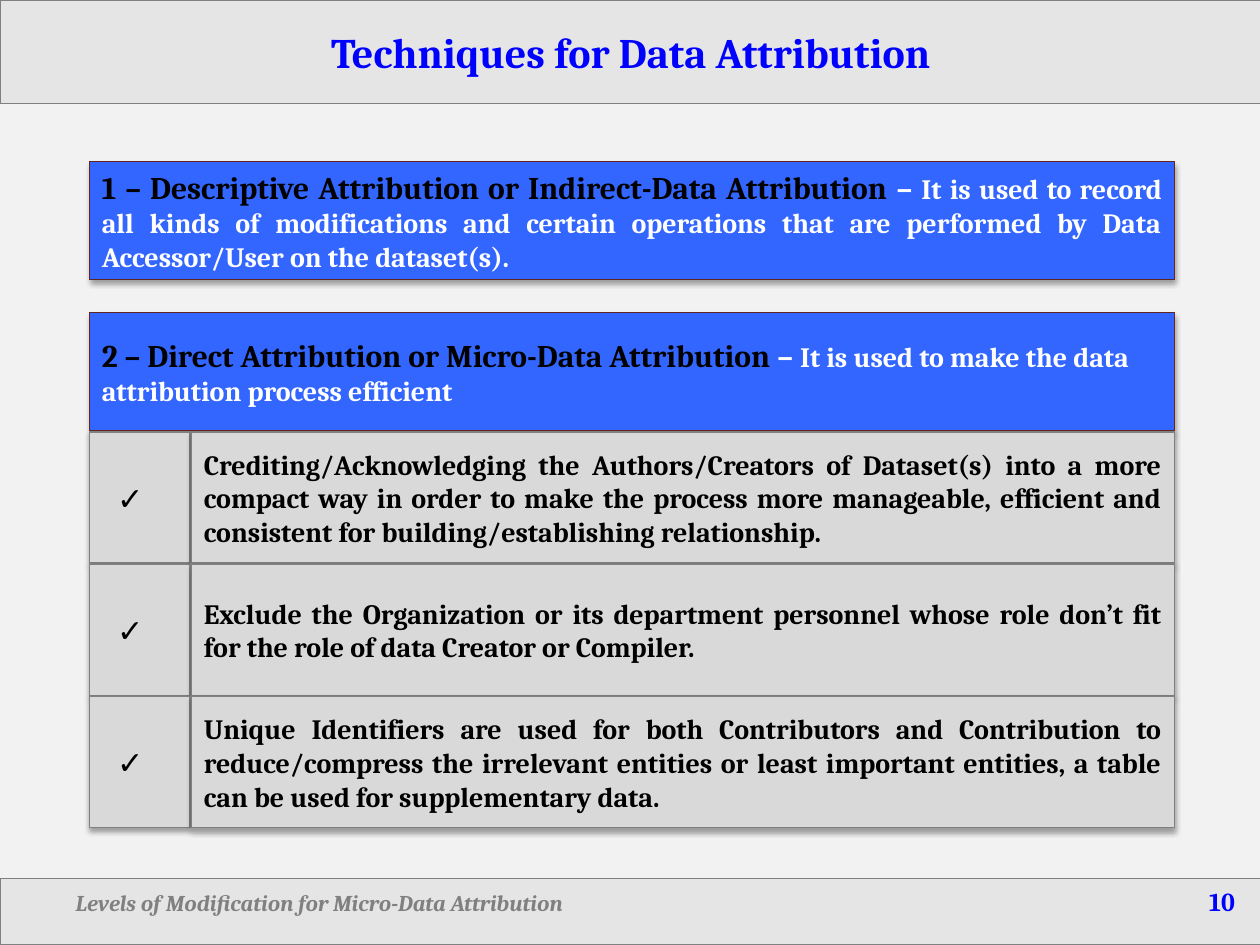
from lxml import etree
from pptx import Presentation
from pptx.dml.color import RGBColor
from pptx.enum.shapes import MSO_SHAPE
from pptx.enum.text import MSO_ANCHOR, MSO_AUTO_SIZE, PP_ALIGN
from pptx.oxml import parse_xml
from pptx.oxml.ns import qn
from pptx.util import Inches, Pt

RECTANGLE = MSO_SHAPE.RECTANGLE
MIDDLE, TOP = MSO_ANCHOR.MIDDLE, MSO_ANCHOR.TOP
LEFT, CENTER, JUSTIFY = PP_ALIGN.LEFT, PP_ALIGN.CENTER, PP_ALIGN.JUSTIFY
COLORS = {
    "background": "F2F2F2", "gray": "D9D9D9", "border": "808080",
    "blue": "3366FF", "brown": "632523", "bright": "0000FF",
    "black": "000000", "white": "FFFFFF",
}
SHADOW = (
    '<a:outerShdw xmlns:a="http://schemas.openxmlformats.org/drawingml/2006/main" '
    'blurRad="40000" dist="23000" dir="5400000" rotWithShape="0">'
    '<a:srgbClr val="000000"><a:alpha val="35000"/></a:srgbClr></a:outerShdw>'
)


def add_span(para, text, size=16, color="black", bold=True, italic=False, font="Cambria"):
    span = para.add_run()
    span.text = text
    span.font.name = font
    span.font.size = Pt(size)
    span.font.bold = bold
    span.font.italic = italic
    span.font.color.rgb = RGBColor.from_string(COLORS[color])


def style_box(box, fill, line, align, anchor=MIDDLE, translucent=False):
    box.shadow.inherit = False
    box.fill.solid()
    box.fill.fore_color.rgb = RGBColor.from_string(COLORS[fill])
    box.line.color.rgb = RGBColor.from_string(COLORS[line])
    box.line.width = Pt(0.75)
    properties = box.element.spPr
    if translucent:
        color = properties.find(qn("a:solidFill"))[0]
        etree.SubElement(color, qn("a:alpha"), val="50000")
    else:
        properties.find(qn("a:effectLst")).append(parse_xml(SHADOW))
    frame = box.text_frame
    frame.word_wrap = True
    frame.auto_size = MSO_AUTO_SIZE.NONE
    frame.vertical_anchor = anchor
    para = frame.paragraphs[0]
    para.alignment = align
    return para


deck = Presentation()
deck.slide_width, deck.slide_height = Inches(10), Inches(7.5)
page = deck.slides.add_slide(deck.slide_layouts[5])
page.background.fill.solid()
page.background.fill.fore_color.rgb = RGBColor.from_string(COLORS["background"])

title = page.shapes.title
title.left, title.top = Inches(0), Inches(0)
title.width, title.height = Inches(10.01), Inches(0.82)
para = style_box(title, "gray", "border", CENTER, translucent=True)
add_span(para, "Techniques for Data Attribution", size=24, color="bright")

footer = page.shapes.add_shape(RECTANGLE, Inches(0), Inches(6.97), Inches(10.01), Inches(0.53))
para = style_box(footer, "gray", "border", LEFT, anchor=TOP, translucent=True)
footer.text_frame.margin_left = Inches(0.6)
footer.text_frame.margin_top = Inches(0.06)
tabs = etree.SubElement(para._p.get_or_add_pPr(), qn("a:tabLst"))
etree.SubElement(tabs, qn("a:tab"), pos=str(Inches(9.2)), algn="r")
add_span(para, "Levels of Modification for Micro-Data Attribution\t", size=12.9,
         color="border", italic=True)
add_span(para, "10", size=14.8, color="bright")

techniques = [
    (1.28, JUSTIFY, "1 – Descriptive Attribution or Indirect-Data Attribution ",
     "It is used to record all kinds of modifications and certain operations "
     "that are performed by Data Accessor/User on the dataset(s)."),
    (2.48, LEFT, "2 – Direct Attribution or Micro-Data Attribution ",
     "It is used to make the data attribution process efficient"),
]
for top, align, heading, description in techniques:
    box = page.shapes.add_shape(RECTANGLE, Inches(0.71), Inches(top), Inches(8.61), Inches(0.94))
    para = style_box(box, "blue", "brown", align)
    add_span(para, heading, size=18)
    add_span(para, "– ", size=18, color="white")
    add_span(para, description, color="white")

points = [
    "Crediting/Acknowledging the Authors/Creators of Dataset(s) into a more compact way "
    "in order to make the process more manageable, efficient and consistent for "
    "building/establishing relationship.",
    "Exclude the Organization or its department personnel whose role don’t fit for the "
    "role of data Creator or Compiler.",
    "Unique Identifiers are used for both Contributors and Contribution to "
    "reduce/compress the irrelevant entities or least important entities, a table can be "
    "used for supplementary data.",
]
for row, point in enumerate(points):
    top = Inches(3.43 + 1.05 * row)
    mark = page.shapes.add_shape(RECTANGLE, Inches(0.71), top, Inches(0.8), Inches(1.04))
    para = style_box(mark, "gray", "border", LEFT)
    mark.text_frame.margin_left = Inches(0.22)
    add_span(para, "✓", size=18, bold=False, font="Arial")
    box = page.shapes.add_shape(RECTANGLE, Inches(1.52), top, Inches(7.8), Inches(1.04))
    add_span(style_box(box, "gray", "border", JUSTIFY), point)

deck.save("out.pptx")
